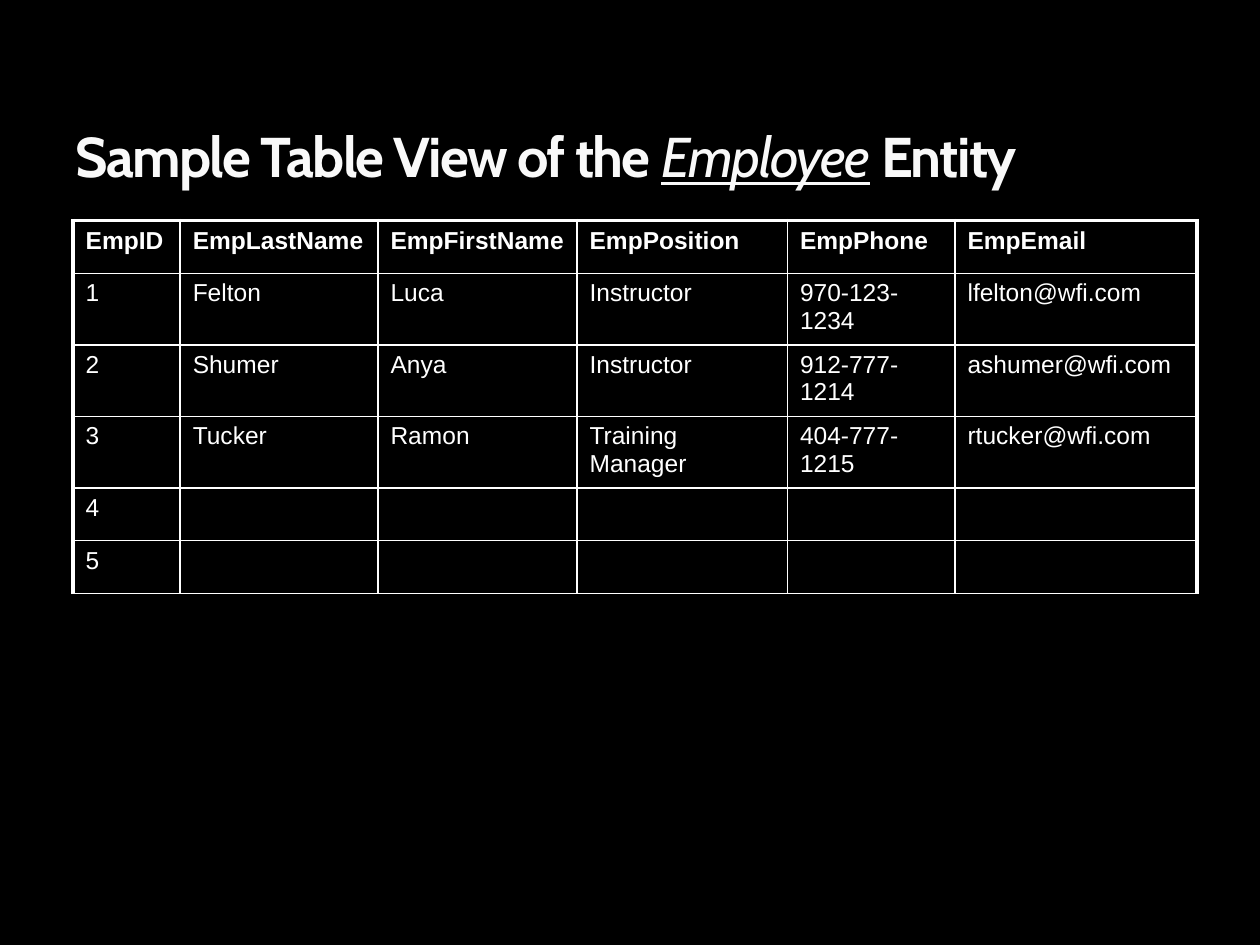
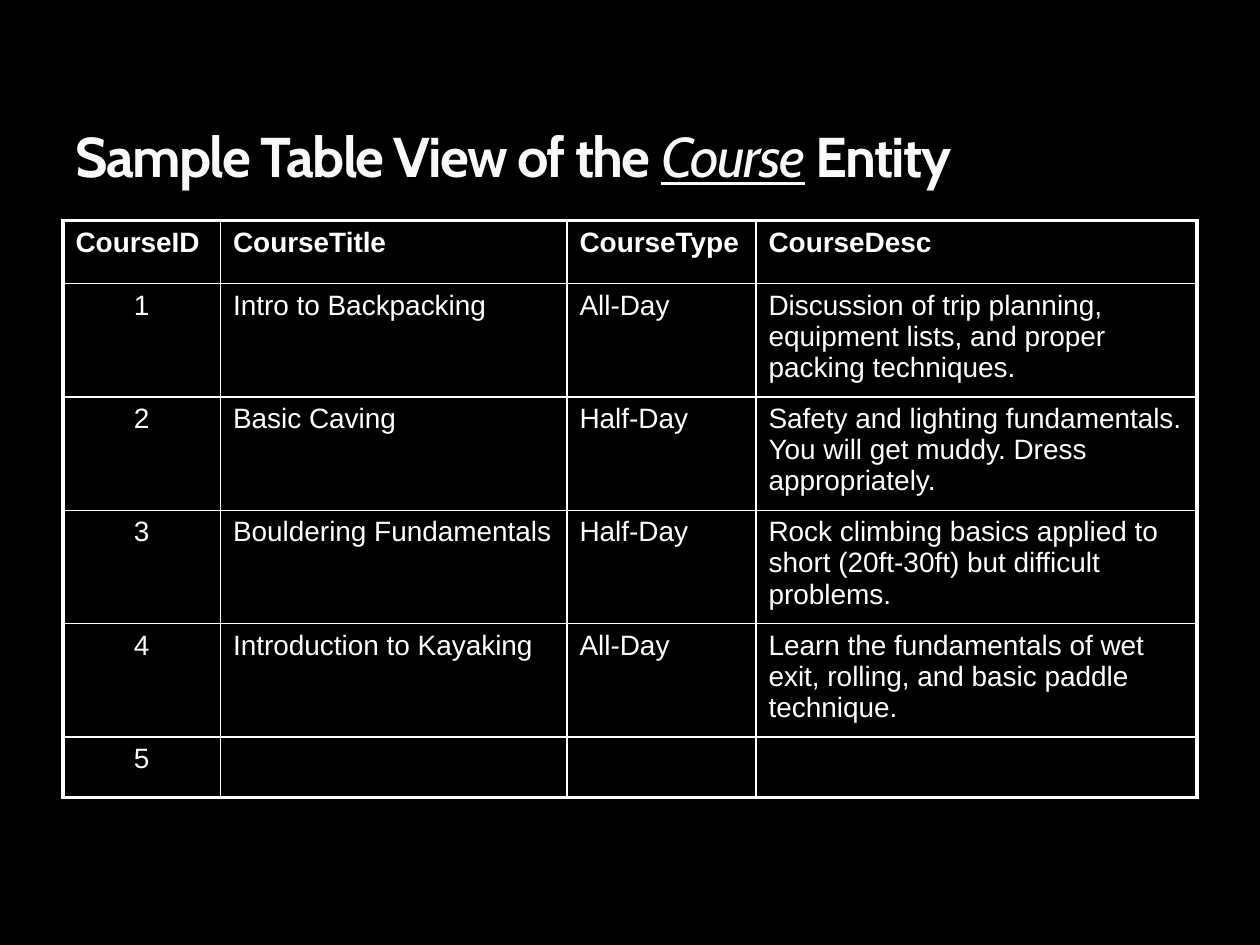
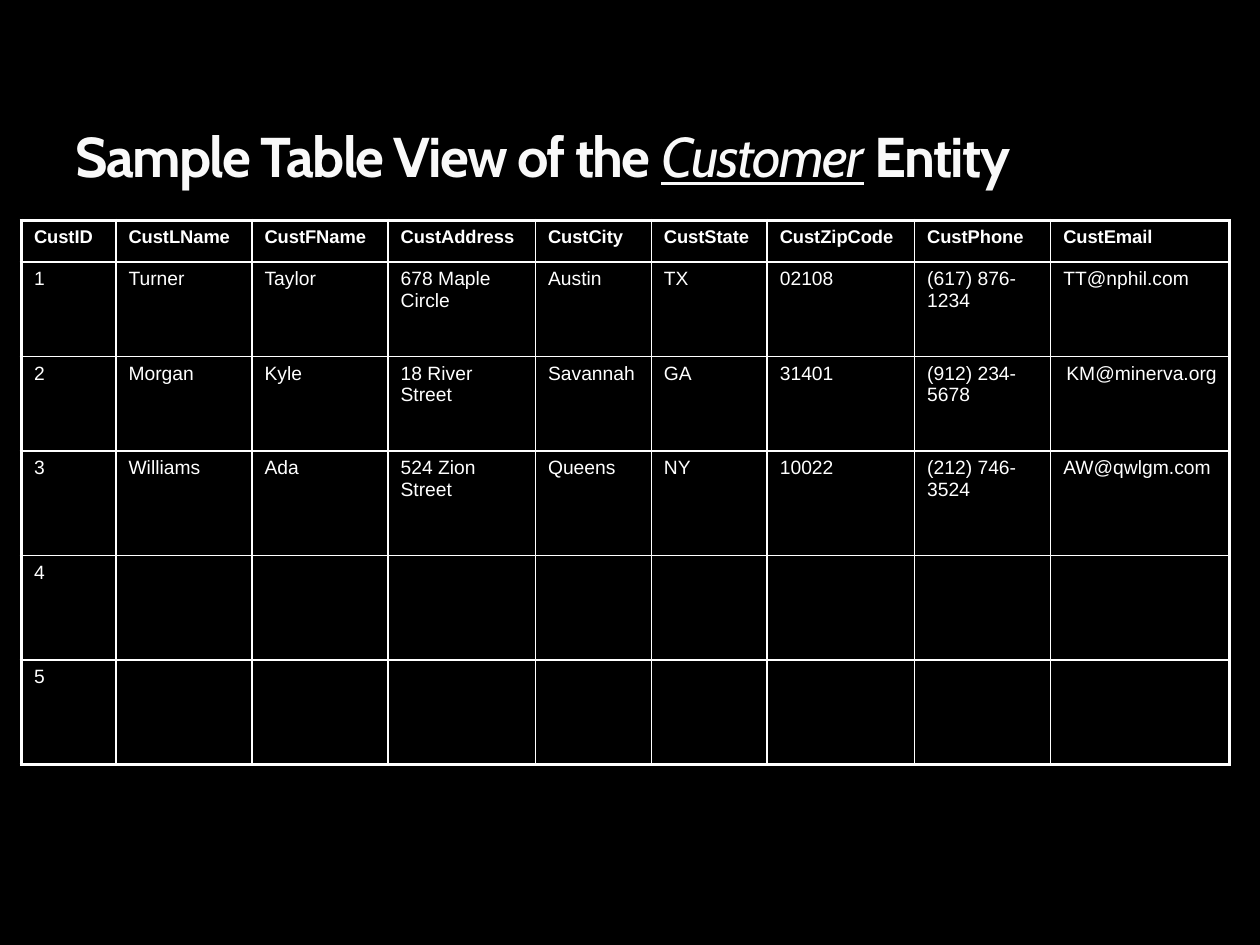
"""Build three slides that show sample table views of database entities."""
import dataclasses

import lxml.etree
import pptx
import pptx.dml.color
import pptx.enum.text
import pptx.oxml.ns
import pptx.util

Inches = pptx.util.Inches
Pt = pptx.util.Pt


@dataclasses.dataclass(frozen=True)
class Theme:
    background: str = "000000"
    title_color: str = "F9F9F9"
    title_outline: str = "3C4422"
    table_color: str = "FFFFFF"
    title_font: str = "Cabin"
    table_font: str = "Arial"
    title_size: float = 32
    outer_border: float = 2.25
    inner_border: float = 1


THEME = Theme()
TITLE_BOX = (0.5, 0.3, 9, 1.25)
TABLE_TOP = 1.75
LEFT, CENTER, RIGHT = (
    pptx.enum.text.PP_ALIGN.LEFT,
    pptx.enum.text.PP_ALIGN.CENTER,
    pptx.enum.text.PP_ALIGN.RIGHT,
)

ENTITIES = [
    {
        "name": "Employee",
        "left": 0.58,
        "widths": [0.85, 1.57, 1.58, 1.67, 1.33, 1.92],
        "heights": [0.42, 0.5, 0.42, 0.42, 0.42, 0.42],
        "header_size": 14,
        "body_size": 14,
        "bottom_border": THEME.inner_border,
        "id_alignment": LEFT,
        "right_aligned": [],
        "rows": [
            ["EmpID", "EmpLastName", "EmpFirstName", "EmpPosition", "EmpPhone", "EmpEmail"],
            ["1", "Felton", "Luca", "Instructor", "970-123-1234", "lfelton@wfi.com"],
            ["2", "Shumer", "Anya", "Instructor", "912-777-1214", "ashumer@wfi.com"],
            ["3", "Tucker", "Ramon", "Training Manager", "404-777-1215", "rtucker@wfi.com"],
            ["4"],
            ["5"],
        ],
    },
    {
        "name": "Course",
        "left": 0.5,
        "widths": [1.25, 2.75, 1.5, 3.5],
        "heights": [0.5, 0.42, 0.48, 0.75, 0.48, 0.48],
        "header_size": 16,
        "body_size": 16,
        "bottom_border": THEME.outer_border,
        "id_alignment": CENTER,
        "right_aligned": [],
        "rows": [
            ["CourseID", "CourseTitle", "CourseType", "CourseDesc"],
            ["1", "Intro to Backpacking", "All-Day",
             "Discussion of trip planning, equipment lists, and proper packing techniques."],
            ["2", "Basic Caving", "Half-Day",
             "Safety and lighting fundamentals. You will get muddy. Dress appropriately."],
            ["3", "Bouldering Fundamentals", "Half-Day",
             "Rock climbing basics applied to short (20ft-30ft) but difficult problems."],
            ["4", "Introduction to Kayaking", "All-Day",
             "Learn the fundamentals of wet exit, rolling, and basic paddle technique."],
            ["5"],
        ],
    },
    {
        "name": "Customer",
        "left": 0.17,
        "widths": [0.75, 1.08, 1.08, 1.17, 0.92, 0.92, 1.17, 1.08, 1.42],
        "heights": [0.33, 0.75, 0.75, 0.83, 0.83, 0.83],
        "header_size": 10.5,
        "body_size": 11,
        "bottom_border": THEME.outer_border,
        "id_alignment": LEFT,
        "right_aligned": [(2, 8)],
        "rows": [
            ["CustID", "CustLName", "CustFName", "CustAddress", "CustCity",
             "CustState", "CustZipCode", "CustPhone", "CustEmail"],
            ["1", "Turner", "Taylor", "678 Maple Circle", "Austin",
             "TX", "02108", "(617) 876-1234", "TT@nphil.com"],
            ["2", "Morgan", "Kyle", "18 River Street", "Savannah",
             "GA", "31401", "(912) 234-5678", "KM@minerva.org"],
            ["3", "Williams", "Ada", "524 Zion Street", "Queens",
             "NY", "10022", "(212) 746-3524", "AW@qwlgm.com"],
            ["4"],
            ["5"],
        ],
    },
]


def make_line(tag, color, width, opacity=100):
    line = lxml.etree.Element(pptx.oxml.ns.qn(tag), w=str(int(Pt(width))))
    fill = lxml.etree.SubElement(line, pptx.oxml.ns.qn("a:solidFill"))
    value = lxml.etree.SubElement(fill, pptx.oxml.ns.qn("a:srgbClr"), val=color)
    if opacity < 100:
        lxml.etree.SubElement(value, pptx.oxml.ns.qn("a:alpha"), val=str(opacity * 1000))
    return line


def style_font(font, name, size, color, bold):
    font.name = name
    font.size = Pt(size)
    font.bold = bold
    font.color.rgb = pptx.dml.color.RGBColor.from_string(color)


def add_title(slide, entity_name):
    text_frame = slide.shapes.add_textbox(*map(Inches, TITLE_BOX)).text_frame
    text_frame.word_wrap = True
    text_frame.vertical_anchor = pptx.enum.text.MSO_ANCHOR.BOTTOM
    paragraph = text_frame.paragraphs[0]
    for text in ("Sample Table View of the ", entity_name, " Entity"):
        is_name = text == entity_name
        run = paragraph.add_run()
        run.text = text
        style_font(run.font, THEME.title_font, THEME.title_size, THEME.title_color, not is_name)
        run.font.italic = is_name
        run.font.underline = is_name
        properties = run._r.get_or_add_rPr()
        properties.set("spc", "-100")
        properties.insert(0, make_line("a:ln", THEME.title_outline, 0.25, 25))


def set_borders(cell, left, right, top, bottom):
    properties = cell._tc.get_or_add_tcPr()
    sides = {"a:lnL": left, "a:lnR": right, "a:lnT": top, "a:lnB": bottom}
    for position, (tag, width) in enumerate(sides.items()):
        properties.insert(position, make_line(tag, THEME.table_color, width))


def fill_cell(cell, text, size, bold, alignment):
    cell.text_frame.text = text
    paragraph = cell.text_frame.paragraphs[0]
    paragraph.alignment = alignment
    paragraph.space_before = Pt(size * 0.2)
    style_font(paragraph.runs[0].font, THEME.table_font, size, THEME.table_color, bold)


def add_entity_table(slide, entity):
    rows, widths, heights = entity["rows"], entity["widths"], entity["heights"]
    last_row, last_column = len(rows) - 1, len(widths) - 1
    outer, inner = THEME.outer_border, THEME.inner_border
    table = slide.shapes.add_table(
        len(rows), len(widths), Inches(entity["left"]), Inches(TABLE_TOP),
        Inches(sum(widths)), Inches(sum(heights)),
    ).table
    table.first_row = False
    table.horz_banding = False
    for column, width in zip(table.columns, widths):
        column.width = Inches(width)
    for row_index, texts in enumerate(rows):
        table.rows[row_index].height = Inches(heights[row_index])
        is_header = row_index == 0
        size = entity["header_size"] if is_header else entity["body_size"]
        for column_index in range(len(widths)):
            cell = table.cell(row_index, column_index)
            cell.fill.background()
            set_borders(
                cell,
                left=outer if column_index == 0 else inner,
                right=outer if column_index == last_column else inner,
                top=outer if is_header else inner,
                bottom=entity["bottom_border"] if row_index == last_row else inner,
            )
            if column_index < len(texts):
                alignment = LEFT
                if column_index == 0 and not is_header:
                    alignment = entity["id_alignment"]
                if (row_index, column_index) in entity["right_aligned"]:
                    alignment = RIGHT
                fill_cell(cell, texts[column_index], size, is_header, alignment)


def main():
    presentation = pptx.Presentation()
    presentation.slide_width = Inches(10)
    presentation.slide_height = Inches(7.5)
    for entity in ENTITIES:
        slide = presentation.slides.add_slide(presentation.slide_layouts[6])
        background = slide.background.fill
        background.solid()
        background.fore_color.rgb = pptx.dml.color.RGBColor.from_string(THEME.background)
        add_title(slide, entity["name"])
        add_entity_table(slide, entity)
    presentation.save("out.pptx")


if __name__ == "__main__":
    main()
